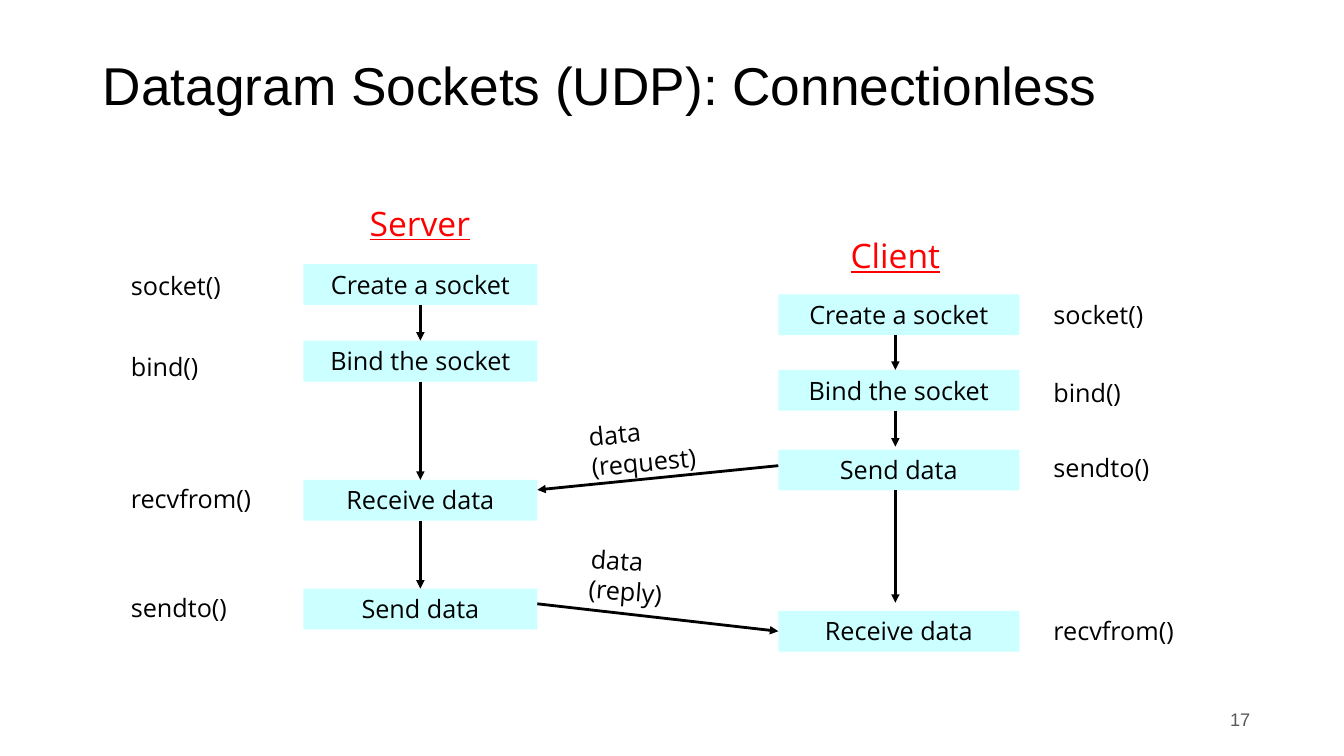
from lxml import etree
from pptx import Presentation
from pptx.dml.color import RGBColor
from pptx.enum.shapes import MSO_CONNECTOR, MSO_SHAPE
from pptx.enum.text import MSO_ANCHOR, MSO_AUTO_SIZE, PP_ALIGN
from pptx.oxml.ns import qn
from pptx.util import Inches, Pt

RECT, STRAIGHT = MSO_SHAPE.RECTANGLE, MSO_CONNECTOR.STRAIGHT
LEFT, CENTER, RIGHT = PP_ALIGN.LEFT, PP_ALIGN.CENTER, PP_ALIGN.RIGHT
TOP, MIDDLE = MSO_ANCHOR.TOP, MSO_ANCHOR.MIDDLE
NO_FIT = MSO_AUTO_SIZE.NONE
SIDE_TOP, SIDE_LEFT, SIDE_BOTTOM = 0, 1, 2

COLORS = {"text": "000000", "heading": "FF0000", "step": "CCFFFF",
          "number": "595959"}
BODY_FONT, TITLE_FONT = "Open Sans", "Arial"

# The grid has 100 columns and 100 rows
WIDTH, HEIGHT = Inches(13.33), Inches(7.5)
STEP_H, HEADING_H = 5.4, 6.8
CALL_W = 12.7

# Each step: name, row of its box, function call, row of the call
SERVER = [("Create a socket", 34.93, "socket()", 35.07),
          ("Bind the socket", 45.07, "bind()", 45.87),
          ("Receive data", 63.47, "recvfrom()", 63.33),
          ("Send data", 77.87, "sendto()", 77.73)]
CLIENT = [("Create a socket", 38.93, "socket()", 38.93),
          ("Bind the socket", 48.93, "bind()", 49.2),
          ("Send data", 59.47, "sendto()", 59.2),
          ("Receive data", 80.8, "recvfrom()", 80.67)]
SERVER_X, SERVER_W, SERVER_CALL_X = 22.58, 17.4, 9
CLIENT_X, CLIENT_W, CLIENT_CALL_X = 57.91, 17.93, 77.64
CLIENT_ARROW_X = 66.62
CLIENT_ARROW_ENDS = [48.93, 59.07, 79.73]


def col(n):
    return round(WIDTH * n / 100)


def row(n):
    return round(HEIGHT * n / 100)


def box(x, y, w, h):
    return col(x), row(y), col(w), row(h)


def set_text(s, text, size=18, color="text", font=BODY_FONT, align=LEFT,
             anchor=TOP, underline=None):
    tf = s.text_frame
    tf.text = text
    tf.word_wrap = True
    tf.auto_size = NO_FIT
    tf.vertical_anchor = anchor
    p = tf.paragraphs[0]
    p.alignment = align
    r = p.runs[0]
    r.font.size = Pt(size)
    r.font.name = font
    r.font.underline = underline
    r.font.color.rgb = RGBColor.from_string(COLORS[color])
    return p


def add_title(slide, text):
    s = slide.shapes.title
    s.left, s.top, s.width, s.height = box(6.9, 2, 86.27, 19.33)
    p = set_text(s, text, 38, font=TITLE_FONT, anchor=MIDDLE)
    p.line_spacing = 0.9


def add_label(slide, text, place, rotation=0, **style):
    s = slide.shapes.add_textbox(*place)
    s.rotation = rotation
    set_text(s, text, **style)


def add_step(slide, text, place):
    s = slide.shapes.add_shape(RECT, *place)
    s.shadow.inherit = False
    s.fill.solid()
    s.fill.fore_color.rgb = RGBColor.from_string(COLORS["step"])
    s.line.fill.background()
    set_text(s, text, align=CENTER)
    return s


def add_arrow(slide, x1=0, y1=0, x2=0, y2=0, begin=None, end=None):
    """Draw an arrow; begin and end are (box, side) pairs to join."""
    s = slide.shapes.add_connector(STRAIGHT, col(x1), row(y1), col(x2), row(y2))
    if begin:
        s.begin_connect(*begin)
    if end:
        s.end_connect(*end)
    s.line.width = Pt(2)
    s.line.color.rgb = RGBColor.from_string(COLORS["text"])
    ln = s.line._get_or_add_ln()
    etree.SubElement(ln, qn("a:tailEnd"), type="triangle")
    etree.SubElement(s._element.spPr, qn("a:effectLst"))


def add_process(slide, steps, x, w, call_x):
    boxes = []
    for name, y, call, call_y in steps:
        boxes.append(add_step(slide, name, box(x, y, w, STEP_H)))
        add_label(slide, call, box(call_x, call_y, CALL_W, STEP_H))
    return boxes


def main():
    prs = Presentation()
    prs.slide_width, prs.slide_height = WIDTH, HEIGHT
    slide = prs.slides.add_slide(prs.slide_layouts[5])
    add_title(slide, "Datagram Sockets (UDP): Connectionless")

    # Server and client columns
    heading = {"size": 24, "color": "heading", "align": CENTER,
               "underline": True}
    add_label(slide, "Server", box(26.33, 26.13, 9.83, HEADING_H), **heading)
    add_label(slide, "Client", box(60.92, 30.4, 11.4, HEADING_H), **heading)
    server = add_process(slide, SERVER, SERVER_X, SERVER_W, SERVER_CALL_X)
    client = add_process(slide, CLIENT, CLIENT_X, CLIENT_W, CLIENT_CALL_X)

    # Order of steps
    for upper, lower in zip(server, server[1:]):
        add_arrow(slide, begin=(upper, SIDE_BOTTOM), end=(lower, SIDE_TOP))
    for step, end_y in zip(CLIENT, CLIENT_ARROW_ENDS):
        add_arrow(slide, CLIENT_ARROW_X, step[1] + STEP_H,
                  CLIENT_ARROW_X, end_y)

    # Messages between client and server
    server_edge = SERVER_X + SERVER_W
    add_arrow(slide, CLIENT_X, 61.6, server_edge, 64.8)
    add_label(slide, "data (request)", box(43.14, 54.13, 12.45, 9.33), -5.6)
    add_arrow(slide, server_edge, 79.87, end=(client[-1], SIDE_LEFT))
    add_label(slide, "data (reply)", box(43.14, 71.73, 10.43, 9.6), 4.1)

    # Slide number
    add_label(slide, "17", box(71.27, 92.53, 22.5, 5.33), size=13,
              color="number", font=TITLE_FONT, align=RIGHT, anchor=MIDDLE)
    prs.save("out.pptx")


if __name__ == "__main__":
    main()
